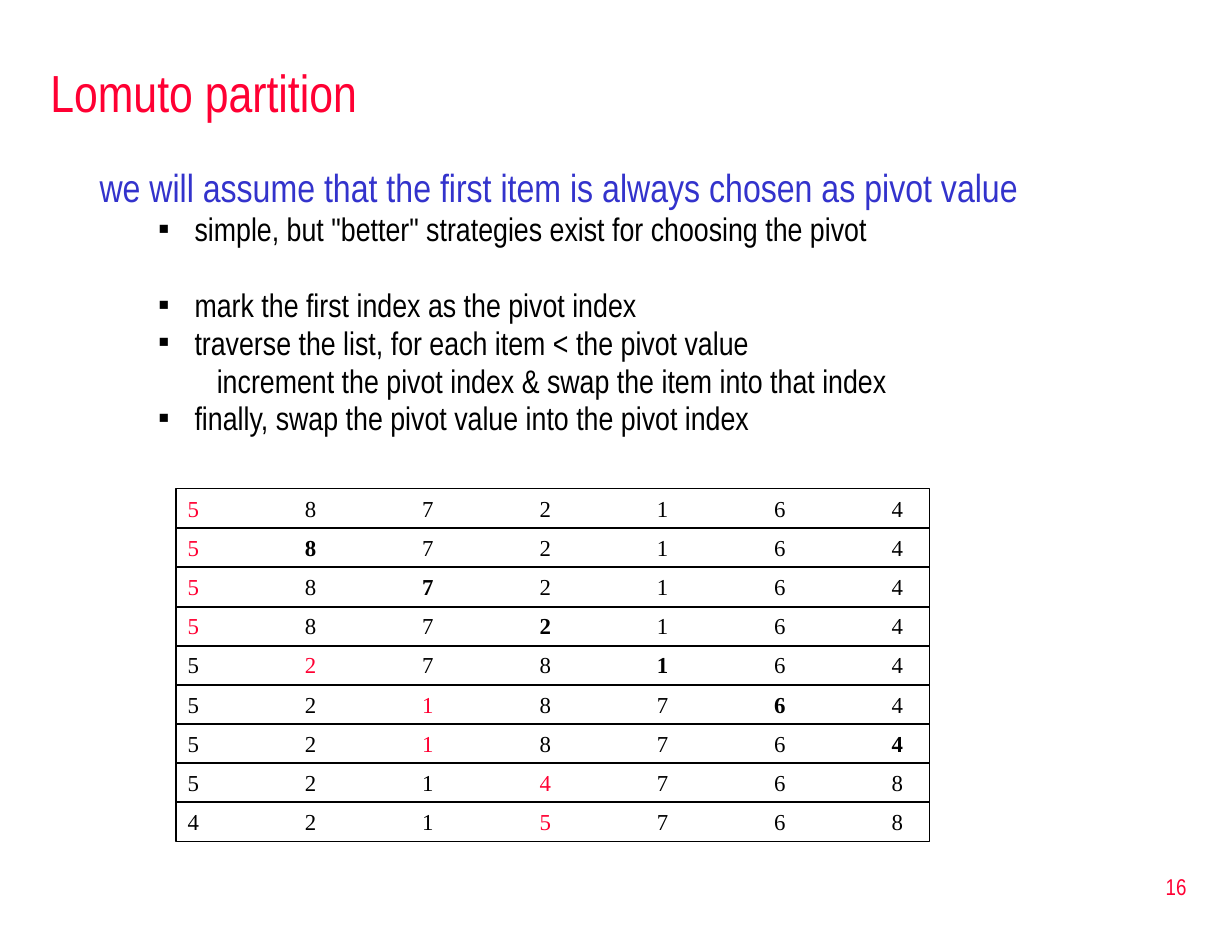
from dataclasses import dataclass

from lxml import etree
from pptx import Presentation
from pptx.dml.color import RGBColor
from pptx.enum.shapes import MSO_SHAPE
from pptx.enum.text import MSO_ANCHOR, PP_ALIGN
from pptx.oxml.ns import qn
from pptx.util import Inches, Pt

RECT = MSO_SHAPE.RECTANGLE
TOP, MIDDLE = MSO_ANCHOR.TOP, MSO_ANCHOR.MIDDLE
LEFT, RIGHT = PP_ALIGN.LEFT, PP_ALIGN.RIGHT


@dataclass(frozen=True)
class Theme:
    red: RGBColor = RGBColor(0xFF, 0x00, 0x33)
    blue: RGBColor = RGBColor(0x33, 0x33, 0xCC)
    black: RGBColor = RGBColor(0x00, 0x00, 0x00)
    sans: str = "Arial Narrow"
    serif: str = "Times New Roman"
    title: int = 32
    lead: int = 24
    body: int = 20
    small: int = 14


@dataclass
class Level:
    margin: float
    hanging: float
    size: int
    color: RGBColor
    spacing: float = 1.0
    bullet: str = ""


class SlideBuilder:
    def __init__(self, slide, theme):
        self.s = slide
        self.theme = theme

    def style(self, font, name, size, color):
        font.name, font.size = name, Pt(size)
        font.color.rgb = color

    def frame(self, box, anchor):
        sp = self.s.shapes.add_textbox(*map(Inches, box))
        tf = sp.text_frame
        tf.word_wrap = True
        tf.vertical_anchor = anchor
        return tf

    def label(self, text, box, size, align=LEFT):
        p = self.frame(box, MIDDLE).paragraphs[0]
        p.text, p.alignment = text, align
        self.style(p.font, self.theme.sans, size, self.theme.red)

    def outline(self, items, box):
        tf = self.frame(box, TOP)
        for i, (level, text, gap) in enumerate(items):
            p = tf.add_paragraph() if i else tf.paragraphs[0]
            p.text = text
            p.line_spacing = level.spacing
            p.space_before = Pt(gap)
            self.style(p.font, self.theme.sans, level.size, level.color)
            pPr = p._p.get_or_add_pPr()
            pPr.set("marL", str(Inches(level.margin)))
            pPr.set("indent", str(-Inches(level.hanging)))
            if level.bullet:
                defaults = pPr.find(qn("a:defRPr"))
                face = etree.Element(qn("a:buFont"), typeface=self.theme.serif)
                defaults.addprevious(face)
                defaults.addprevious(etree.Element(qn("a:buChar"), char=level.bullet))

    def list_row(self, values, pivot, current, box):
        sp = self.s.shapes.add_shape(RECT, *map(Inches, box))
        sp.shadow.inherit = False
        sp.fill.background()
        sp.line.color.rgb = self.theme.black
        sp.line.width = Pt(0.75)
        tf = sp.text_frame
        tf.vertical_anchor = TOP
        p = tf.paragraphs[0]
        p.alignment = LEFT
        p._p.get_or_add_pPr().set("defTabSz", str(Inches(1)))
        for i, value in enumerate(values):
            r = p.add_run()
            r.text = f"\t{value}" if i else value
            color = self.theme.red if i == pivot else self.theme.black
            self.style(r.font, self.theme.serif, self.theme.small, color)
            r.font.bold = i == current


def main():
    prs = Presentation()
    prs.slide_width, prs.slide_height = Inches(10.5), Inches(8)
    theme = Theme()
    slide = SlideBuilder(prs.slides.add_slide(prs.slide_layouts[6]), theme)

    slide.label("Lomuto partition", (0.33, 0.41, 9.92, 0.75), theme.title)

    lead = Level(0.38, 0.38, theme.lead, theme.blue)
    point = Level(0.81, 0.31, theme.body, theme.black, 0.8, "▪")
    detail = Level(1.25, 0.25, theme.body, theme.black, 0.8)
    gap, section_gap = 4, 27.3
    slide.outline([
        (lead, "we will assume that the first item is always chosen as pivot value", gap),
        (point, 'simple, but "better" strategies exist for choosing the pivot', gap),
        (point, "mark the first index as the pivot index", section_gap),
        (point, "traverse the list, for each item < the pivot value", gap),
        (detail, "increment the pivot index & swap the item into that index", gap),
        (point, "finally, swap the pivot value into the pivot index", gap),
    ], (0.75, 1.34, 9.17, 2.6))

    steps = [
        ("5872164", 0, None),
        ("5872164", 0, 1),
        ("5872164", 0, 2),
        ("5872164", 0, 3),
        ("5278164", 1, 4),
        ("5218764", 2, 5),
        ("5218764", 2, 6),
        ("5214768", 3, None),
        ("4215768", 3, None),
    ]
    for i, (values, pivot, current) in enumerate(steps):
        slide.list_row(values, pivot, current, (1.5, 4.165 + i / 3, 6.42, 0.34))

    slide.label("16", (8.02, 7.29, 2.19, 0.53), theme.small, RIGHT)
    prs.save("out.pptx")


if __name__ == "__main__":
    main()
